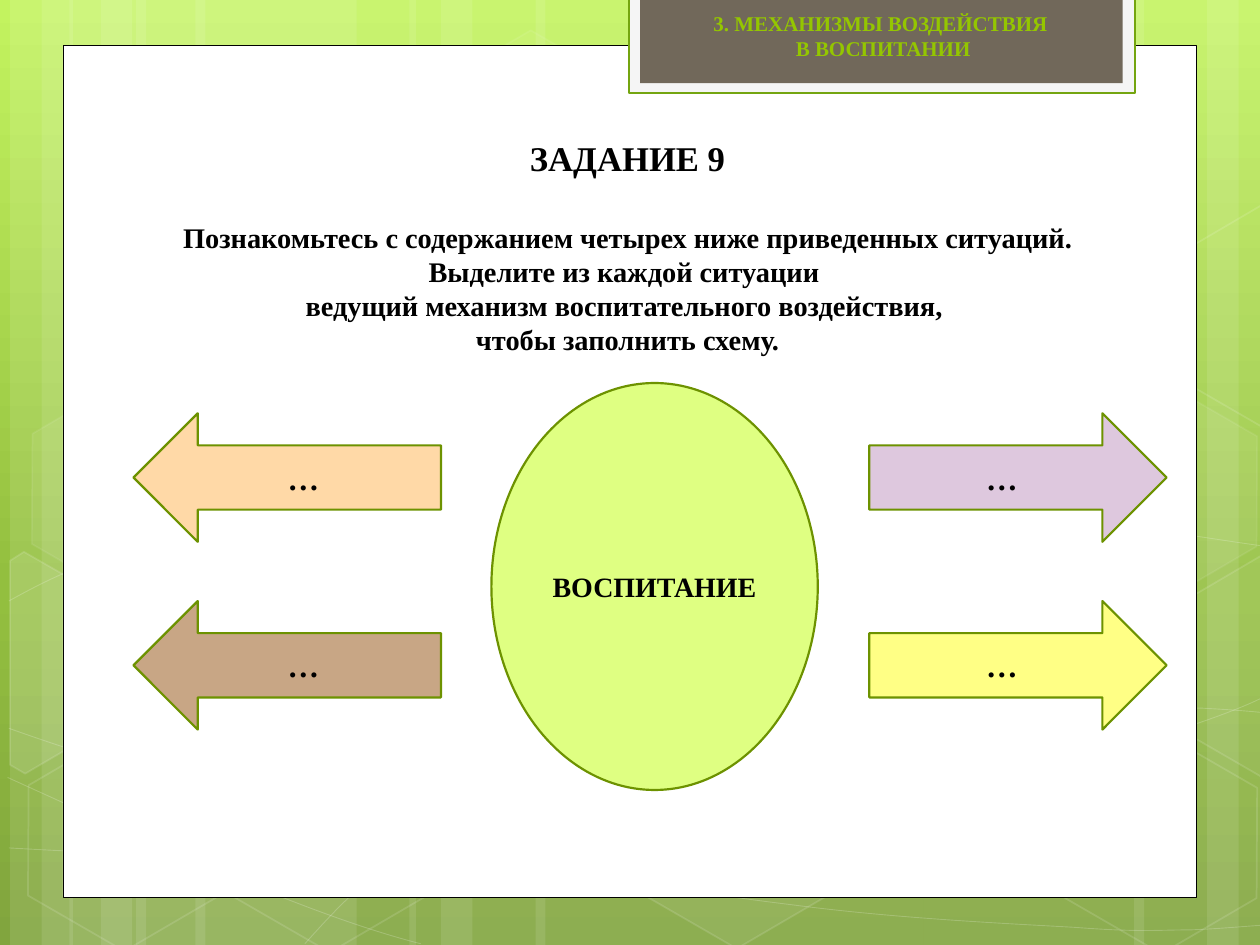
import math
from copy import deepcopy
from typing import NamedTuple, Optional

from lxml import etree
from pptx import Presentation, util as u
from pptx.dml.color import RGBColor
from pptx.enum import shapes, text
from pptx.oxml.ns import qn

COLUMNS, ROWS = 10, 7.5
FONT = "Times New Roman"
WHITE, BLACK, OUTLINE = "FFFFFF", "000000", "6D9200"
KIND = shapes.MSO_SHAPE
TILT = 30


class Box(NamedTuple):
    left: float
    top: float
    width: float
    height: float


class Bar(NamedTuple):
    left: float
    width: float
    rotation: int = 0


class Hexagon(NamedTuple):
    left: float
    top: float
    fill_alpha: Optional[int]
    line_alpha: int


class CutHexagon(NamedTuple):
    points: list
    fill_alpha: Optional[int]


class Arrow(NamedTuple):
    box: Box
    fill: str
    flipped: bool = False


BARS = [Bar(1.08, 1.75), Bar(0.08, 0.5), Bar(0.33, 0.83), Bar(1.55, 1.75),
        Bar(0.55, 0.5), Bar(0.8, 0.83), Bar(7.33, 1.75, 180), Bar(9.58, 0.5, 180),
        Bar(9, 0.83, 180), Bar(4.25, 3.08), Bar(3.25, 0.5), Bar(3.5, 0.83)]

WAVES = [
    [(0.07, 6.73), (0.61, 6.76), (1.15, 6.79), (1.9, 6.78), (2.65, 6.77), (3.58, 6.75),
     (4.58, 6.65), (5.58, 6.55), (7, 6.36), (7.92, 6.17), (8.83, 5.98), (9.77, 5.68),
     (10.07, 5.51)],
    [(0.07, 4.77), (0.36, 4.61), (0.65, 4.46), (1.21, 4.31), (1.78, 4.16), (2.59, 3.94),
     (3.47, 3.87), (4.36, 3.8), (5.44, 3.79), (6.54, 3.87), (7.64, 3.95), (9.47, 4.26),
     (10.07, 4.34)],
    [(0.06, 6.17), (1.27, 6.72), (2.47, 7.27), (3.34, 7.49)],
    [(0.07, 5.78), (0.38, 5.89), (0.7, 6), (1.28, 6.16), (1.86, 6.31), (2.73, 6.56),
     (3.57, 6.73), (4.4, 6.9), (5.45, 7.08), (6.28, 7.18), (7.11, 7.29), (8, 7.33),
     (8.53, 7.36), (9.05, 7.4), (9.19, 7.38), (9.45, 7.38), (9.71, 7.37), (9.89, 7.35),
     (10.07, 7.34)],
    [(2.42, 7.49), (2.6, 7.29), (2.78, 7.09), (3.02, 6.91), (3.26, 6.73), (3.6, 6.53),
     (3.88, 6.39), (4.16, 6.25), (4.33, 6.19), (4.7, 6.09), (5.06, 5.99), (5.73, 5.85),
     (6.08, 5.78), (6.44, 5.71), (6.49, 5.71), (6.8, 5.69), (7.11, 5.66), (7.6, 5.63),
     (7.94, 5.62), (8.29, 5.61), (8.86, 5.62), (8.86, 5.62), (9.08, 5.62), (9.3, 5.62),
     (9.53, 5.62), (9.71, 5.63), (9.88, 5.64), (10.06, 5.66)],
]

HEXAGONS = [Hexagon(3.34, 0.36, 4, 8), Hexagon(4.97, 5.89, 6, 12),
            Hexagon(0.11, 5.91, None, 12), Hexagon(0.14, 3.12, 7, 8),
            Hexagon(1.74, 5.92, None, 12), Hexagon(7.53, 4.53, 10, 12),
            Hexagon(8.34, 5.93, None, 12), Hexagon(8.34, 3.14, 7, 8)]

CUT_HEXAGONS = [
    CutHexagon([(0.08, 4.45), (0.19, 4.38), (0.96, 4.82), (0.95, 5.7), (0.2, 6.14),
                (0.08, 6.07)], 10),
    CutHexagon([(9.26, 4.85), (10.01, 4.41), (10.09, 4.46), (10.09, 6.13), (10.02, 6.17),
                (9.26, 5.73)], 4),
    CutHexagon([(9.26, 2.07), (10.01, 1.63), (10.1, 1.68), (10.09, 3.35), (10.02, 3.39),
                (9.26, 2.95)], None),
]

ARROWS = [
    Arrow(Box(1.06, 3.28, 2.44, 1.02), "FFD9A7"),
    Arrow(Box(1.06, 4.77, 2.44, 1.02), "C8A685"),
    Arrow(Box(6.9, 3.28, 2.36, 1.02), "DEC8DE", True),
    Arrow(Box(6.9, 4.77, 2.36, 1.02), "FFFF85", True),
]

deck = Presentation()
deck.slide_width, deck.slide_height = u.Inches(10), u.Inches(7.5)
slide = deck.slides.add_slide(deck.slide_layouts[5])


def across(columns: float) -> int:
    return round(deck.slide_width * columns / COLUMNS)


def down(rows: float) -> int:
    return round(deck.slide_height * rows / ROWS)


def place(box: Box) -> tuple:
    return across(box.left), down(box.top), across(box.width), down(box.height)


def paint(target, color: str, alpha: Optional[int] = None) -> None:
    target.solid()
    target.fore_color.rgb = RGBColor.from_string(color)
    if alpha is not None:
        rgb = target._xPr.find(qn("a:solidFill"))[0]
        etree.SubElement(rgb, qn("a:alpha"), val=str(alpha * 1000))


def style(shape, fill=None, fill_alpha=None, line=None, weight=1.0, line_alpha=None) -> None:
    shape.shadow.inherit = False
    if fill:
        paint(shape.fill, fill, fill_alpha)
    else:
        shape.fill.background()
    if line:
        paint(shape.line.fill, line, line_alpha)
        shape.line.width = u.Pt(weight)
    else:
        shape.line.fill.background()


def add_preset(kind: int, box: Box, **look):
    shape = slide.shapes.add_shape(kind, *place(box))
    style(shape, **look)
    return shape


def add_outline(points: list, close: bool, **look):
    corners = [(across(x), down(y)) for x, y in points]
    builder = slide.shapes.build_freeform(*corners[0])
    builder.add_line_segments(corners[1:], close=close)
    shape = builder.convert_to_shape()
    style(shape, **look)
    return shape


def add_wave(points: list) -> None:
    wave = add_outline(points, False, line=WHITE, weight=0.5, line_alpha=20)
    segments = list(wave.element.iter(qn("a:lnTo")))
    for first in range(0, len(segments), 3):
        curve = etree.Element(qn("a:cubicBezTo"))
        segments[first].addprevious(curve)
        for segment in segments[first:first + 3]:
            curve.append(segment[0])
            segment.getparent().remove(segment)


def turn(x: float, y: float, degrees: float) -> tuple:
    cos, sin = math.cos(math.radians(degrees)), math.sin(math.radians(degrees))
    return x * cos - y * sin, x * sin + y * cos


def add_cut_hexagon(cut: CutHexagon) -> None:
    upright = [turn(x, y, -TILT) for x, y in cut.points]
    shape = add_outline(upright, True, fill=WHITE if cut.fill_alpha else None,
                        fill_alpha=cut.fill_alpha, line=WHITE, line_alpha=12)
    x, y = turn(shape.left + shape.width / 2, shape.top + shape.height / 2, TILT)
    shape.left, shape.top = round(x - shape.width / 2), round(y - shape.height / 2)
    shape.rotation = TILT


def write(shape, paragraphs: list, sizes: list, color: str = BLACK, gap: float = 0,
          anchor=text.MSO_ANCHOR.MIDDLE) -> None:
    frame = shape.text_frame
    frame.word_wrap = True
    frame.auto_size = text.MSO_AUTO_SIZE.NONE
    frame.vertical_anchor = anchor
    frame.text = "\n".join(paragraphs)
    for paragraph, size in zip(frame.paragraphs, sizes):
        paragraph.alignment = text.PP_ALIGN.CENTER
        paragraph.space_after = u.Pt(gap)
        for run in paragraph.runs:
            run.font.name, run.font.size, run.font.bold = FONT, u.Pt(size), True
            run.font.color.rgb = RGBColor.from_string(color)


def draw_background() -> None:
    backdrop = slide.background.fill
    backdrop.gradient()
    backdrop.gradient_angle = 270
    last = list(slide.element.iter(qn("a:gs")))[-1]
    last.addprevious(deepcopy(last))
    stops = [("C3F35F", 0), ("93BF3F", 0.62), ("81A53E", 1)]
    for stop, (color, position) in zip(backdrop.gradient_stops, stops):
        stop.color.rgb = RGBColor.from_string(color)
        stop.position = position
    for bar in BARS:
        stripe = add_preset(KIND.RECTANGLE, Box(bar.left, 0, bar.width, ROWS),
                            fill=WHITE, fill_alpha=10)
        stripe.rotation = bar.rotation
    for wave in WAVES:
        add_wave(wave)
    for cell in HEXAGONS:
        hexagon = add_preset(KIND.HEXAGON, Box(cell.left, cell.top, 1.75, 1.52),
                             fill=WHITE if cell.fill_alpha else None,
                             fill_alpha=cell.fill_alpha, line=WHITE, line_alpha=cell.line_alpha)
        hexagon.adjustments[0], hexagon.adjustments[1] = 0.285, 1.155
        hexagon.rotation = TILT
    for cut in CUT_HEXAGONS:
        add_cut_hexagon(cut)


def draw_content() -> None:
    for box, look in [
        (Box(0.5, 0.36, 9, 6.76), dict(fill=WHITE, line=BLACK, weight=0.5)),
        (Box(4.99, -0.02, 4.02, 0.76), dict(fill="F5F5F5", line="74A510", weight=1.25)),
        (Box(5.08, -0.02, 3.83, 0.68), dict(fill="71685A")),
    ]:
        add_preset(KIND.RECTANGLE, box, **look)

    task = slide.shapes.title
    task.left, task.top, task.width, task.height = place(Box(1.14, 1.12, 7.68, 1.76))
    write(task, ["ЗАДАНИЕ 9",
                 "Познакомьтесь с содержанием четырех ниже приведенных ситуаций.\v"
                 "Выделите из каждой ситуации \v"
                 "ведущий механизм воспитательного воздействия, \v"
                 "чтобы заполнить схему."],
          [19.8, 16.2], anchor=text.MSO_ANCHOR.BOTTOM)
    task.text_frame.paragraphs[0].space_after = u.Pt(24)
    task.element.getparent().append(task.element)

    section = slide.shapes.add_textbox(*place(Box(5.08, 0.03, 3.86, 0.5)))
    write(section, ["3. МЕХАНИЗМЫ ВОЗДЕЙСТВИЯ ", "В ВОСПИТАНИИ"], [12, 12], color="94C600",
          anchor=text.MSO_ANCHOR.BOTTOM)

    upbringing = add_preset(KIND.OVAL, Box(3.9, 3.04, 2.59, 3.23), fill="DFFF82",
                            line=OUTLINE, weight=1.25)
    write(upbringing, ["ВОСПИТАНИЕ"], [16])
    for arrow in ARROWS:
        mechanism = add_preset(KIND.LEFT_ARROW, arrow.box, fill=arrow.fill, line=OUTLINE,
                               weight=1.25)
        if arrow.flipped:
            mechanism.element.spPr.find(qn("a:xfrm")).set("flipH", "1")
        write(mechanism, ["…"], [18])


if __name__ == "__main__":
    draw_background()
    draw_content()
    deck.save("out.pptx")
